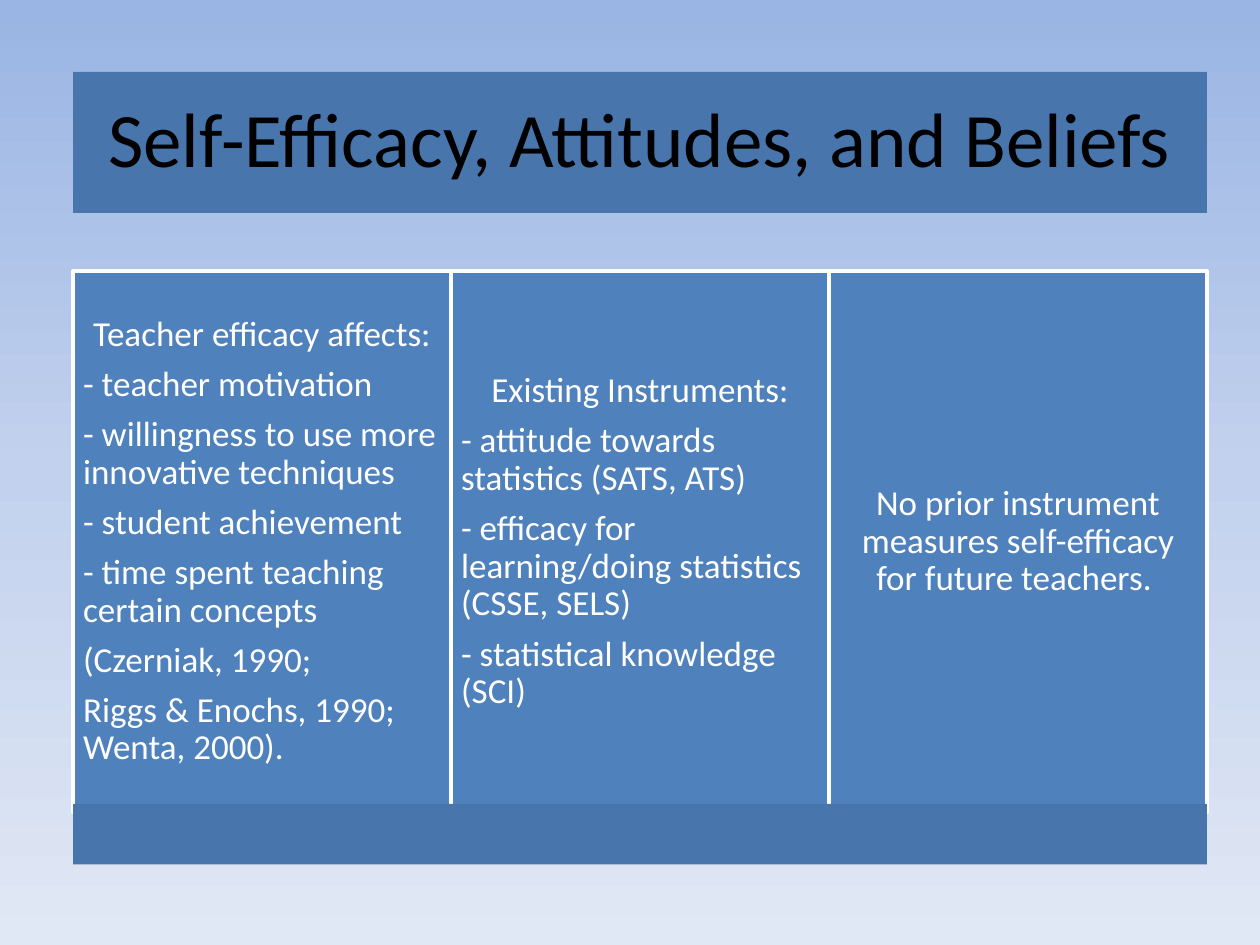
from copy import deepcopy
from dataclasses import dataclass

from pptx import Presentation
from pptx.dml.color import RGBColor
from pptx.enum.shapes import MSO_SHAPE
from pptx.enum.text import MSO_ANCHOR, PP_ALIGN
from pptx.util import Inches, Pt


@dataclass(frozen=True)
class Theme:
    font: str = "Calibri"
    title_size: int = 44
    body_size: int = 20
    title_color: str = "000000"
    body_color: str = "FFFFFF"
    band_fill: str = "4875AC"
    panel_fill: str = "4F81BD"
    panel_line: str = "FFFFFF"
    backdrop: tuple = ((0, "9AB5E4"), (0.5, "C2D1ED"), (1, "E1E8F5"))


THEME = Theme()
PAGE_WIDTH, PAGE_HEIGHT = 10, 7.5
LEFT, GRID_WIDTH = 0.58, 9
PANEL_TOP, PANEL_HEIGHT = 2.15, 4.3

TITLE = "Self-Efficacy, Attitudes, and Beliefs"
PANELS = [
    [
        "Teacher efficacy affects:",
        "- teacher motivation",
        "- willingness to use more innovative techniques",
        "- student achievement",
        "- time spent teaching certain concepts",
        "(Czerniak, 1990;",
        "Riggs & Enochs, 1990; Wenta, 2000).",
    ],
    [
        "Existing Instruments:",
        "- attitude towards statistics (SATS, ATS)",
        "- efficacy for learning/doing statistics (CSSE, SELS)",
        "- statistical knowledge (SCI)",
    ],
    ["No prior instrument measures self-efficacy for future teachers. "],
]


def paint_backdrop(page):
    fill = page.background.fill
    fill.gradient()
    fill.gradient_angle = 270
    last_stop = page.element.xpath(".//p:bg//a:gs")[-1]
    last_stop.addprevious(deepcopy(last_stop))
    for stop, (position, color) in zip(fill.gradient_stops, THEME.backdrop):
        stop.position = position
        stop.color.rgb = RGBColor.from_string(color)


def add_box(page, left, top, width, height, fill, line=None):
    box = page.shapes.add_shape(
        MSO_SHAPE.RECTANGLE, Inches(left), Inches(top), Inches(width), Inches(height)
    )
    box.shadow.inherit = False
    box.fill.solid()
    box.fill.fore_color.rgb = RGBColor.from_string(fill)
    if line:
        box.line.color.rgb = RGBColor.from_string(line)
        box.line.width = Pt(2)
    else:
        box.line.fill.background()
    return box


def write_text(box, lines, size, color, inset):
    frame = box.text_frame
    frame.text = "\n".join(lines)
    frame.word_wrap = True
    frame.vertical_anchor = MSO_ANCHOR.MIDDLE
    frame.margin_left = frame.margin_right = Inches(inset)
    frame.margin_top = frame.margin_bottom = Inches(inset)
    for index, para in enumerate(frame.paragraphs):
        para.alignment = PP_ALIGN.LEFT if index else PP_ALIGN.CENTER
        para.line_spacing = 0.9
        para.space_after = Pt(0.35 * size)
        for span in para.runs:
            span.font.name = THEME.font
            span.font.size = Pt(size)
            span.font.color.rgb = RGBColor.from_string(color)


def add_band(page, top, height):
    return add_box(page, LEFT, top, GRID_WIDTH, height, THEME.band_fill)


def add_panel(page, column, lines):
    width = GRID_WIDTH / len(PANELS)
    panel = add_box(
        page, LEFT + column * width, PANEL_TOP, width, PANEL_HEIGHT,
        THEME.panel_fill, THEME.panel_line,
    )
    write_text(panel, lines, THEME.body_size, THEME.body_color, 0.08)


def main():
    deck = Presentation()
    deck.slide_width, deck.slide_height = Inches(PAGE_WIDTH), Inches(PAGE_HEIGHT)
    page = deck.slides.add_slide(deck.slide_layouts[6])
    paint_backdrop(page)
    title_band = add_band(page, 0.57, 1.12)
    write_text(title_band, [TITLE], THEME.title_size, THEME.title_color, 0.18)
    for column, lines in enumerate(PANELS):
        add_panel(page, column, lines)
    add_band(page, 6.38, 0.48)
    deck.save("out.pptx")


if __name__ == "__main__":
    main()
